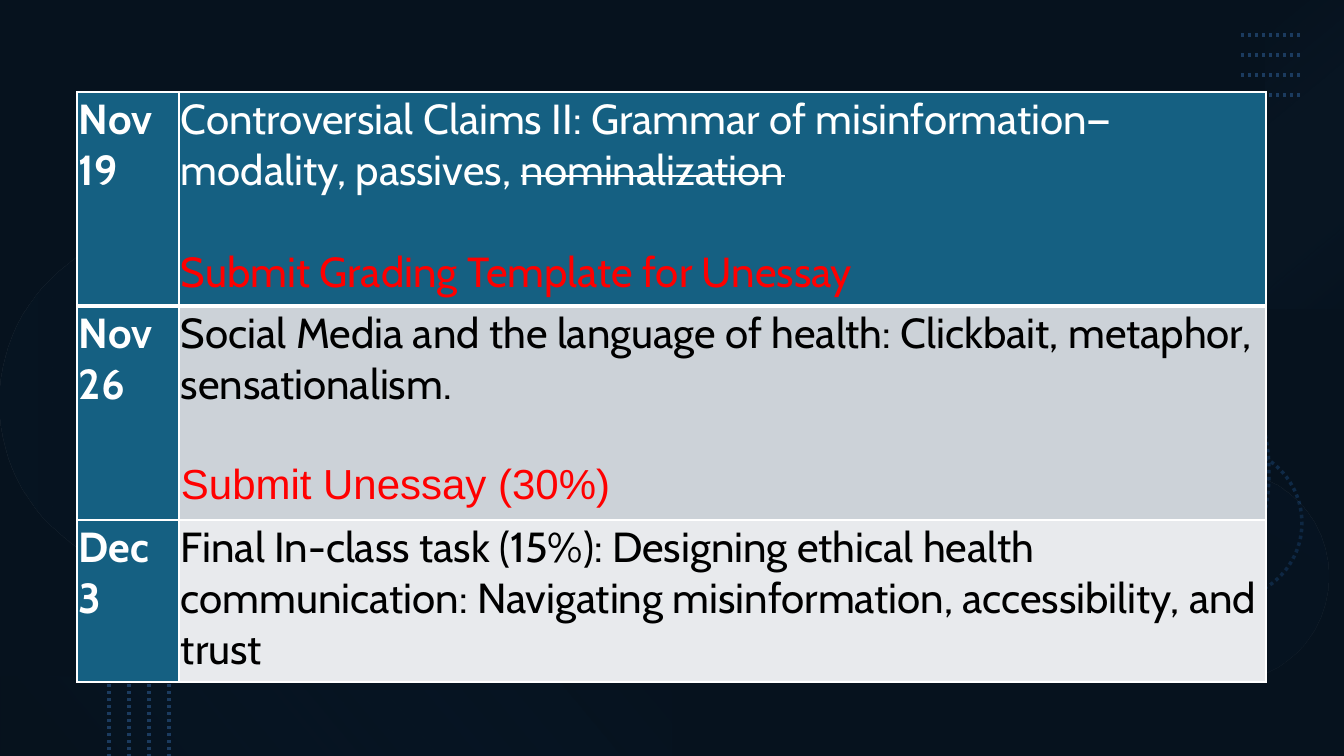
from pptx import Presentation
from pptx.dml.color import RGBColor as RGB
from pptx.enum.dml import MSO_LINE_DASH_STYLE as Dash
from pptx.enum.shapes import MSO_CONNECTOR as Conn, MSO_SHAPE as Geo
from pptx.enum.text import MSO_ANCHOR as Anchor, PP_ALIGN as Align
from pptx.oxml.ns import qn
from pptx.util import Pt
from lxml.etree import SubElement as Sub

# Content: date, topic, struck-out words, task, task font
rows = [
    ("Nov 19", "Controversial Claims II: Grammar of misinformation—modality, passives, ",
     "nominalization", "Submit Grading Template for Unessay", "Cabin"),
    ("Nov 26", "Social Media and the language of health: Clickbait, metaphor, sensationalism.",
     "", "Submit Unessay (30%)", "Arial"),
    ("Dec 3", "Final In-class task (15%): Designing ethical health communication: "
     "Navigating misinformation, accessibility, and trust", "", "", ""),
]

# Theme
theme = dict(font="Cabin", size=30, gap=36.5, white="FFFFFF", black="000000",
             red="FF0000", teal="156082", navy="0E2841", dots="1B3B5F",
             ring="0F2A47", bands=["156082", "CCD2D8", "E8EAED"])

# Layout in px
wide, high = 1344, 756
left, top = 77, 92
cols, tall = [102, 1087], [214, 214, 162]
inset = 2
rings = [(876, 276, 393), (1150, 447, 152)]
# Frame, shape, turn, gradient angle, stops of (place, colour, opacity %)
glows = [
    ((0, 229, 347, 347), Geo.OVAL, 270, 90, [(0, "0B1E31", 20), (1, "071420", 10)]),
    ((1119, 471, 210, 210), Geo.OVAL, 210, 90, [(0, "0B1E31", 10), (1, "0B1E31", 20)]),
    ((1151, 115, 308, 79), Geo.RECTANGLE, 270, 140, [(0, "71AAE0", 0), (1, "0B1E31", 10)]),
    ((0, 677, 672, 79), Geo.RECTANGLE, 180, 140, [(0.1, "071420", 10), (1, "2D7FCF", 0)]),
]


def px(n):
    return round(n * 914400 / 100.8)


def rgb(name):
    return RGB.from_string(theme.get(name, name))


prs = Presentation()
prs.slide_width, prs.slide_height = px(wide), px(high)
slide = prs.slides.add_slide(prs.slide_layouts[6])
shapes = slide.shapes


def shape(geo, box):
    item = shapes.add_shape(geo, *map(px, box))
    item.shadow.inherit = False
    item.line.fill.background()
    return item


def fade(item, parts):
    for tag, part in zip(item._element.spPr.iter(qn("a:srgbClr")), parts):
        Sub(tag, qn("a:alpha"), val=str(part * 1000))


def dot(line, name):
    line.color.rgb = rgb(name)
    line.width = Pt(2.5)
    line.dash_style = Dash.ROUND_DOT


def stroke(x1, y1, x2, y2):
    line = shapes.add_connector(Conn.STRAIGHT, *map(px, (x1, y1, x2, y2)))
    dot(line.line, "dots")
    Sub(line._element.spPr, qn("a:effectLst"))


# Backdrop
for name, part in (("navy", 100), ("black", 53)):
    back = shape(Geo.RECTANGLE, (0, 0, wide, high))
    back.fill.solid()
    back.fill.fore_color.rgb = rgb(name)
    fade(back, [part])

# Dotted rings and soft glows
for x, y, size in rings:
    ring = shape(Geo.OVAL, (x, y, size, size))
    ring.fill.background()
    dot(ring.line, "ring")
for box, geo, turn, angle, stops in glows:
    glow = shape(geo, box)
    glow.rotation = turn
    glow.fill.gradient()
    glow.fill.gradient_angle = 360 - angle
    for stop, (place, name, part) in zip(glow.fill.gradient_stops, stops):
        stop.position = place
        stop.color.rgb = rgb(name)
    fade(glow, [part for _, _, part in stops])

# Dotted strokes, bottom left and top right
for i in range(4):
    stroke(109 + 20 * i, 614, 109 + 20 * i, high)
for i in range(4):
    stroke(1241, 35 + 20 * i, 1301, 35 + 20 * i)


# Table
def style(para, name, bold=False, font=theme["font"]):
    para.alignment = Align.LEFT
    face = para.font
    face.name, face.size, face.bold = font, Pt(theme["size"]), bold
    face.color.rgb = rgb(name)


def edge(cell, side, width):
    line = Sub(cell._tc.get_or_add_tcPr(), qn("a:" + side), w=str(Pt(width)))
    Sub(Sub(line, qn("a:solidFill")), qn("a:srgbClr"), val=theme["white"])


def dress(cell, row, name):
    cell.margin_left = cell.margin_right = px(inset)
    cell.margin_top = cell.margin_bottom = px(inset)
    cell.vertical_anchor = Anchor.TOP
    for side in ("lnL", "lnR", "lnT", "lnB"):
        thick = (row, side) in ((0, "lnB"), (1, "lnT"))
        edge(cell, side, 3 if thick else 1)
    cell.fill.solid()
    cell.fill.fore_color.rgb = rgb(name)


grid = shapes.add_table(len(rows), len(cols), px(left), px(top),
                        px(sum(cols)), px(sum(tall))).table
for col, size in zip(grid.columns, cols):
    col.width = px(size)
for i, (date, topic, struck, task, font) in enumerate(rows):
    grid.rows[i].height = px(tall[i])
    day, plan = grid.cell(i, 0), grid.cell(i, 1)
    dress(day, i, "teal")
    dress(plan, i, theme["bands"][i])
    day.text = date
    style(day.text_frame.paragraphs[0], "white", True)
    plan.text = topic
    para = plan.text_frame.paragraphs[0]
    style(para, "black" if i else "white")
    if struck:
        run = para.add_run()
        run.text = struck
        run._r.get_or_add_rPr().set("strike", "sngStrike")
    if task:
        para = plan.text_frame.add_paragraph()
        para.text = task
        para.space_before = Pt(theme["gap"])
        style(para, "red", font=font)

prs.save("out.pptx")
